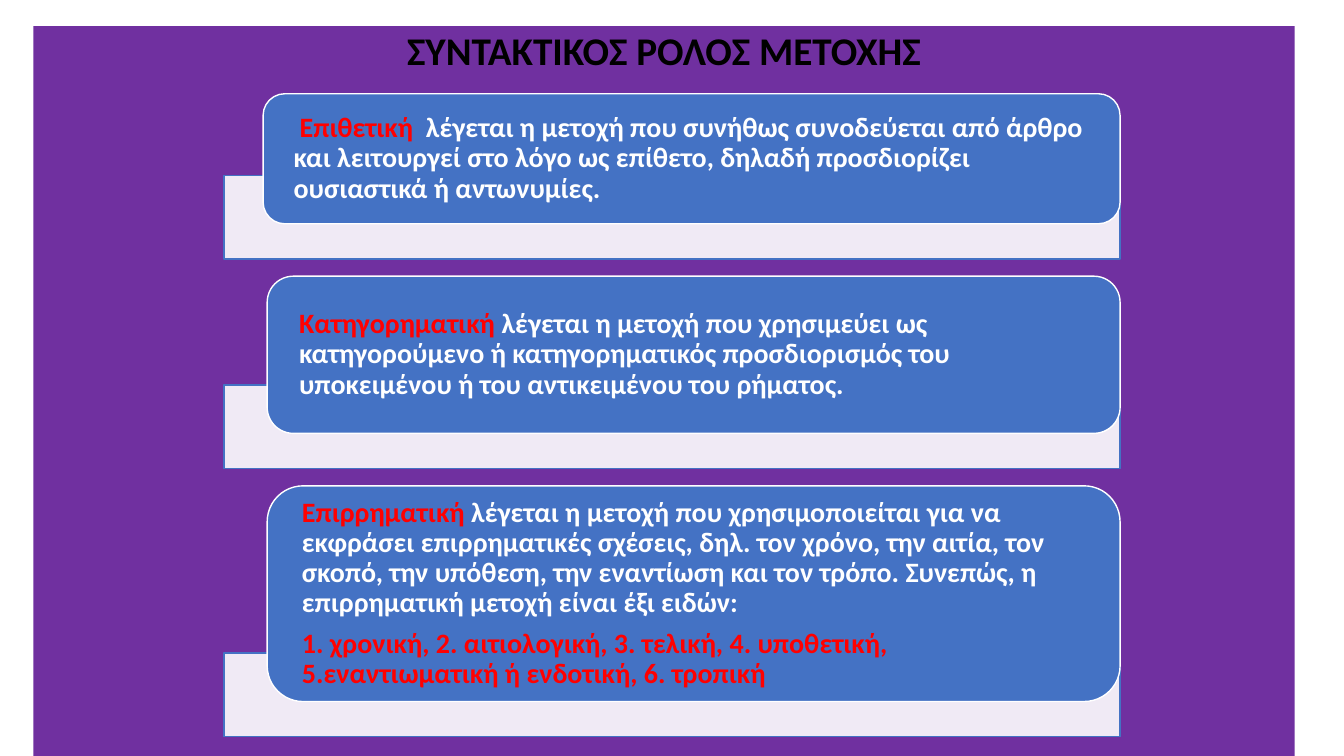
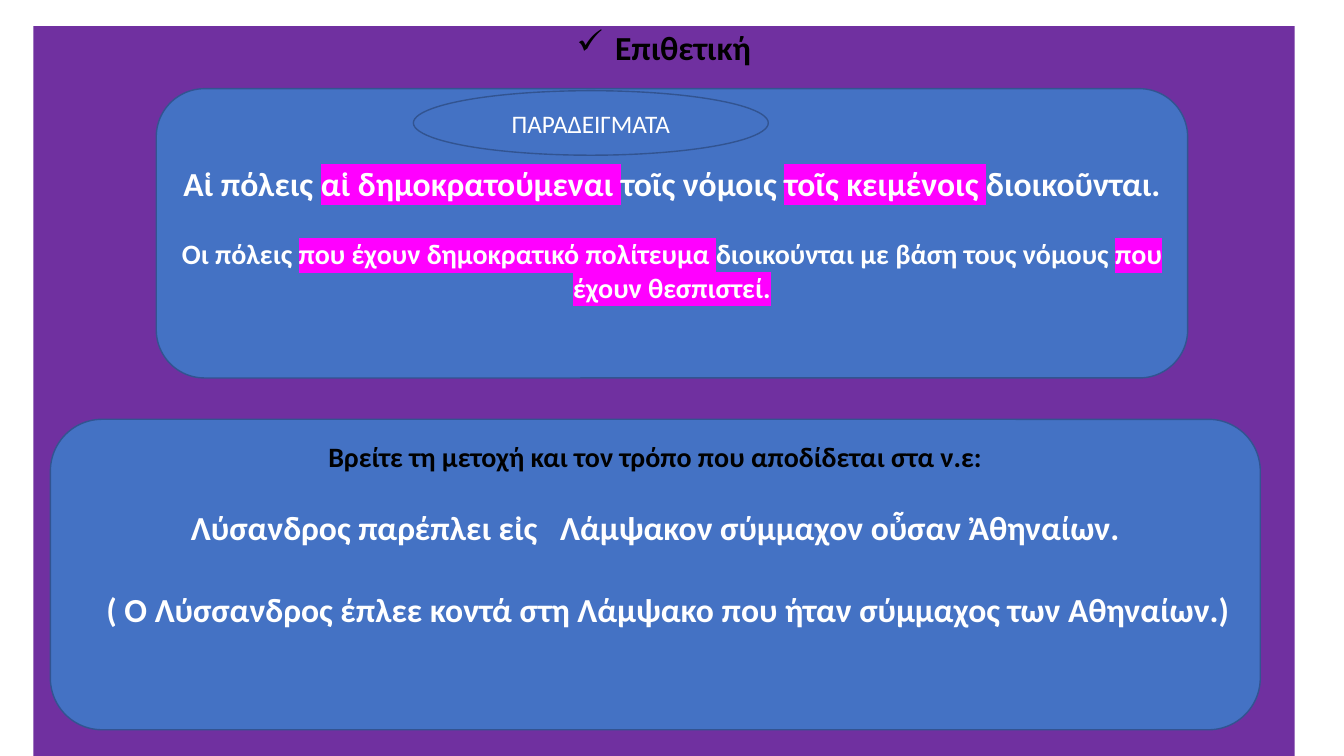
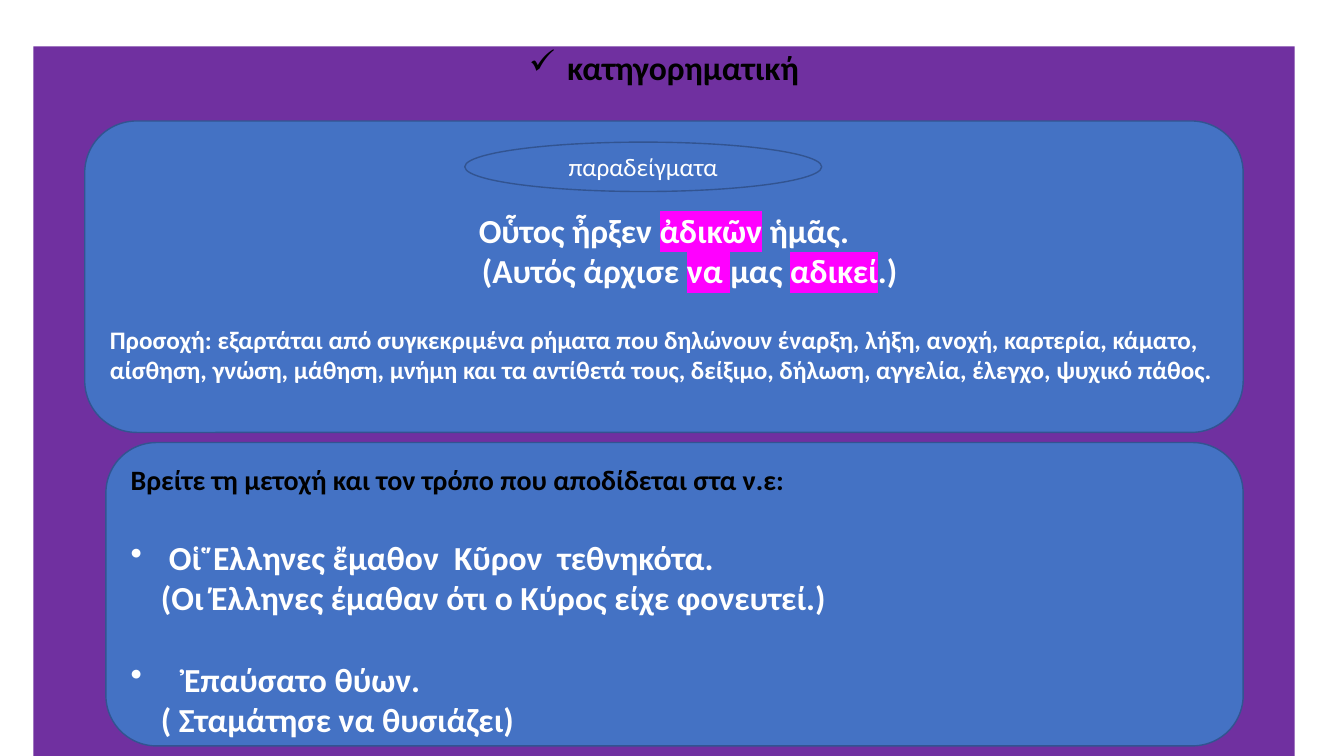
from lxml import etree
from pptx import Presentation
from pptx.dml.color import RGBColor
from pptx.enum.shapes import MSO_SHAPE
from pptx.enum.text import MSO_ANCHOR, PP_ALIGN
from pptx.oxml.ns import qn
from pptx.util import Inches, Pt

RECT, ROUND, OVAL = MSO_SHAPE.RECTANGLE, MSO_SHAPE.ROUNDED_RECTANGLE, MSO_SHAPE.OVAL
TOP, MID = MSO_ANCHOR.TOP, MSO_ANCHOR.MIDDLE
LEFT, MID_P = PP_ALIGN.LEFT, PP_ALIGN.CENTER

WIDE, HIGH = 13.33, 7.5
THEME = {
    "font": "Calibri",
    "panel": "7030A0", "card": "4472C4", "edge": "325491",
    "white": "FFFFFF", "black": "000000", "red": "FF0000", "mark": "FF00FF",
    "head": 28, "big": 24, "mid": 20, "small": 18,
}
PANEL = {"left": 0.33, "top": 0.26, "width": 12.51}
INSET = (0.1, 0.05, 0.1, 0.05)
TASK = "Βρείτε τη μετοχή και τον τρόπο που αποδίδεται στα ν.ε:"
HANG = 0.38


def para(*runs, size="big", **form):
    return {"runs": runs, "size": size, **form}


ROLES = [
    (2.61, 1.29, [
        para(("Επιθετική  ", "red"),
             "λέγεται η μετοχή που συνήθως συνοδεύεται από άρθρο και λειτουργεί στο λόγο ως "
             "επίθετο, δηλαδή προσδιορίζει ουσιαστικά ή αντωνυμίες.",
             size="mid", line=0.9, first=0.06)]),
    (2.65, 1.56, [
        para(("Κατηγορηματική ", "red"),
             "λέγεται η μετοχή που χρησιμεύει ως κατηγορούμενο ή κατηγορηματικός "
             "προσδιορισμός του υποκειμένου ή του αντικειμένου του ρήματος.",
             size="mid", line=0.9)]),
    (2.65, 2.14, [
        para(("Επιρρηματική", "red"),
             " λέγεται η μετοχή που χρησιμοποιείται για να εκφράσει επιρρηματικές σχέσεις, "
             "δηλ. τον χρόνο, την αιτία, τον σκοπό, την υπόθεση, την εναντίωση και τον τρόπο. "
             "Συνεπώς, η επιρρηματική μετοχή είναι έξι ειδών:",
             size="mid", line=0.9),
        para(("1. χρονική, 2. αιτιολογική, 3. τελική, 4. υποθετική, "
              "5.εναντιωματική ή ενδοτική, 6. τροπική", "red"),
             size="mid", line=0.9, gap=7)]),
]

LESSONS = [
    {"title": "Επιθετική", "top": 0.26,
     "label": ("ΠΑΡΑΔΕΙΓΜΑΤΑ", (4.1, 0.9, 3.52, 0.64)),
     "cards": [
         ((1.55, 0.88, 10.23, 2.87), MID, INSET, [
             para("Αἱ πόλεις ", ("αἱ δημοκρατούμεναι ", "mark"), "τοῖς νόμοις ",
                  ("τοῖς κειμένοις ", "mark"), "διοικοῦνται.", align=MID_P),
             para("Οι πόλεις ", ("που έχουν δημοκρατικό πολίτευμα ", "mark"),
                  "διοικούνται με βάση τους νόμους ", ("που έχουν θεσπιστεί.", "mark"),
                  size="mid", align=MID_P, gap=24.4)]),
         ((0.5, 4.16, 12, 3.08), TOP, INSET, [
             para((TASK, "black"), size="mid", align=MID_P),
             para("Λύσανδρος παρέπλει εἰς   Λάμψακον σύμμαχον οὖσαν Ἀθηναίων.",
                  align=MID_P, gap=24.4),
             para("( Ο Λύσσανδρος έπλεε κοντά στη Λάμψακο που ήταν σύμμαχος των Αθηναίων.)",
                  align=MID_P, gap=29.3, left=0.25)]),
     ]},
    {"title": "κατηγορηματική", "top": 0.46,
     "label": ("παραδείγματα", (4.61, 1.41, 3.54, 0.49)),
     "cards": [
         ((0.84, 1.2, 11.49, 3.09), MID, (0.1, 0.46, 0.1, 0.05), [
             para("Οὗτος ἦρξεν ", ("ἀδικῶν", "mark"), " ἡμᾶς.", align=MID_P),
             para("(Αυτός άρχισε ", ("να ", "mark"), "μας ", ("αδικεί", "mark"), ".)",
                  left=3.69),
             para("Προσοχή: εξαρτάται από συγκεκριμένα ρήματα που δηλώνουν έναρξη, λήξη, "
                  "ανοχή, καρτερία, κάματο, αίσθηση, γνώση, μάθηση, μνήμη και τα αντίθετά "
                  "τους, δείξιμο, δήλωση, αγγελία, έλεγχο, ψυχικό πάθος.",
                  size="small", gap=24.4)]),
         ((1.05, 4.39, 11.28, 3.01), TOP, INSET, [
             para((TASK, "black"), size="mid"),
             para("Οἱ Ἕλληνες ἔμαθον  Κῦρον  τεθνηκότα.",
                  gap=29.3, left=HANG, first=-HANG, mark="•"),
             para("(Οι Έλληνες έμαθαν ότι ο Κύρος είχε φονευτεί.)", left=0.3),
             para("Ἐπαύσατο θύων.", gap=29.3, left=0.53, first=-0.53, mark="•"),
             para("( Σταμάτησε να θυσιάζει)", left=0.3)]),
     ]},
]


def tint(name):
    return RGBColor.from_string(THEME[name])


def put(item, **vals):
    for key, val in vals.items():
        setattr(item, key, val)


def paint(fill, name):
    fill.solid()
    fill.fore_color.rgb = tint(name)


def add_run(line, text, kind, size, bold):
    run = line.add_run()
    run.text = text
    put(run.font, size=Pt(THEME[size]), bold=bold, name=THEME["font"])
    run.font.color.rgb = tint("white" if kind == "mark" else kind)
    if kind == "mark":
        glow = etree.Element(qn("a:highlight"))
        etree.SubElement(glow, qn("a:srgbClr")).set("val", THEME["mark"])
        run.font._element.find(qn("a:solidFill")).addnext(glow)


def write(frame, paras, anchor, inset=INSET, bold=True):
    sides = ("margin_left", "margin_top", "margin_right", "margin_bottom")
    put(frame, word_wrap=True, vertical_anchor=anchor,
        **{side: Inches(val) for side, val in zip(sides, inset)})
    for num, data in enumerate(paras):
        line = frame.add_paragraph() if num else frame.paragraphs[0]
        put(line, alignment=data.get("align", LEFT), space_before=Pt(data.get("gap", 0)),
            line_spacing=data.get("line", 1.0))
        props = line._p.get_or_add_pPr()
        for key, attr in (("left", "marL"), ("first", "indent")):
            props.set(attr, str(Inches(data.get(key, 0))))
        if "mark" in data:
            etree.SubElement(props, qn("a:buChar")).set("char", data["mark"])
        for part in data["runs"]:
            text, kind = (part, "white") if isinstance(part, str) else part
            add_run(line, text, kind, data["size"], bold)


def add_box(slide, form, box, fill="card", edge="edge"):
    shape = slide.shapes.add_shape(form, *map(Inches, box))
    shape.shadow.inherit = False
    paint(shape.fill, fill)
    shape.line.color.rgb = tint(edge)
    shape.line.width = Pt(1)
    return shape


def set_panel(shape, top):
    vals = {**PANEL, "top": top, "height": HIGH - top}
    put(shape, **{key: Inches(val) for key, val in vals.items()})


def add_page(deck, layout, text, top=PANEL["top"], size="big", **form):
    slide = deck.slides.add_slide(layout)
    title = slide.shapes.title
    set_panel(title, top)
    write(title.text_frame,
          [para((text, "black"), size=size, align=MID_P, line=0.9, **form)], TOP)
    return slide


def add_roles(slide):
    right, bar, high, top = 11.11, 2.22, 0.83, 0.93
    for left, tall, paras in ROLES:
        low = top + tall
        back = add_box(slide, RECT, (bar, low - 0.48, right - bar, high), "white", "card")
        clr = back.fill._xPr.find(qn("a:solidFill"))[0]
        etree.SubElement(clr, qn("a:alpha")).set("val", "90000")
        card = add_box(slide, ROUND, (left, top, right - left, tall), edge="white")
        write(card.text_frame, paras, MID, (0.24, 0, 0.24, 0))
        top = low + 0.52


def add_lesson(slide, data):
    for box, anchor, inset, paras in data["cards"]:
        write(add_box(slide, ROUND, box).text_frame, paras, anchor, inset)
    text, box = data["label"]
    label = add_box(slide, OVAL, box)
    write(label.text_frame, [para(text, size="small", align=MID_P)], MID, bold=False)


def main():
    deck = Presentation()
    put(deck, slide_width=Inches(WIDE), slide_height=Inches(HIGH))
    layout = deck.slide_layouts.get_by_name("Title Only")
    base = layout.placeholders[0]
    set_panel(base, PANEL["top"])
    paint(base.fill, "panel")
    add_roles(add_page(deck, layout, "ΣΥΝΤΑΚΤΙΚΟΣ ΡΟΛΟΣ ΜΕΤΟΧΗΣ", size="head"))
    for data in LESSONS:
        slide = add_page(deck, layout, data["title"], data["top"],
                         left=HANG, first=-HANG, mark="✓")
        add_lesson(slide, data)
    deck.save("out.pptx")


if __name__ == "__main__":
    main()
